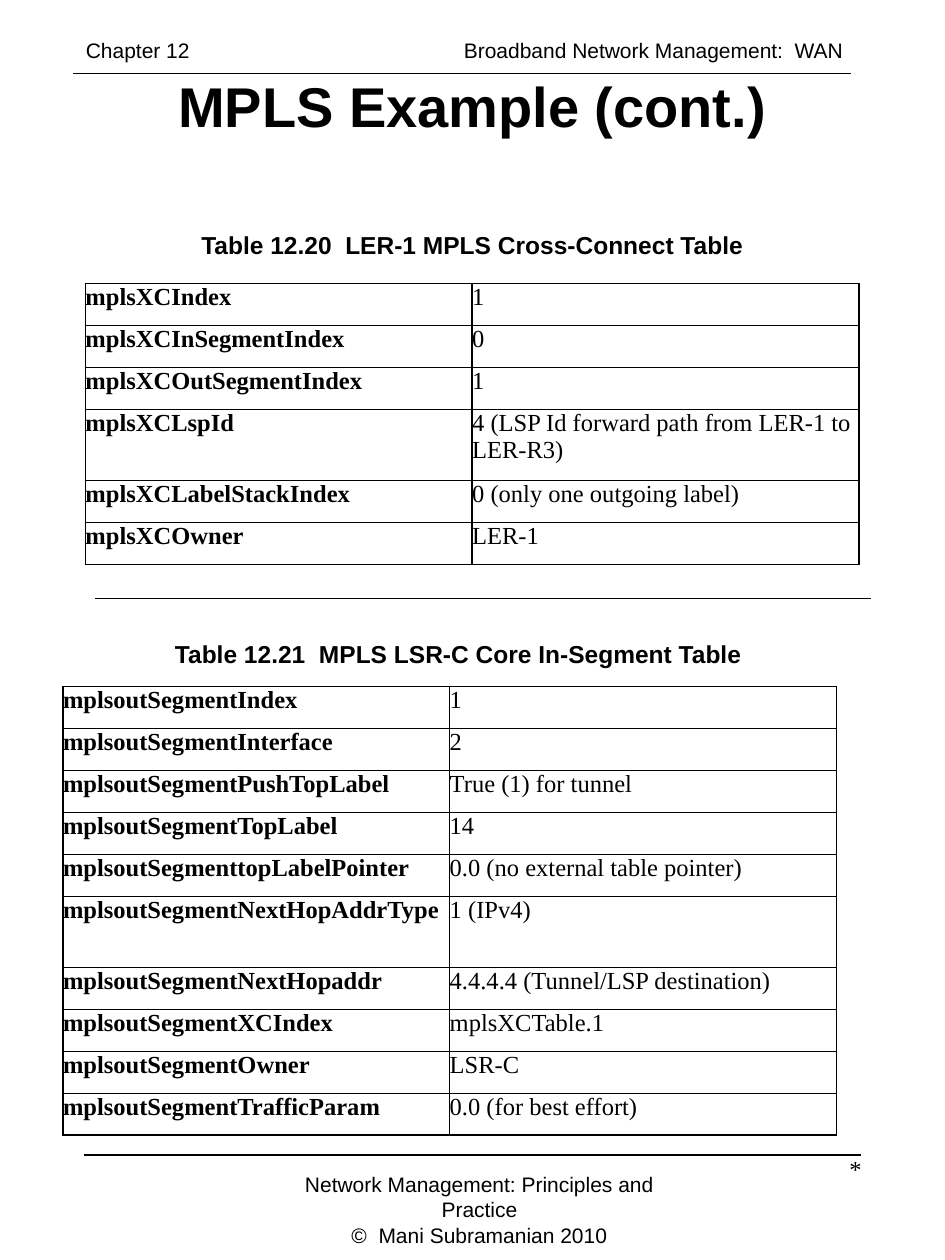
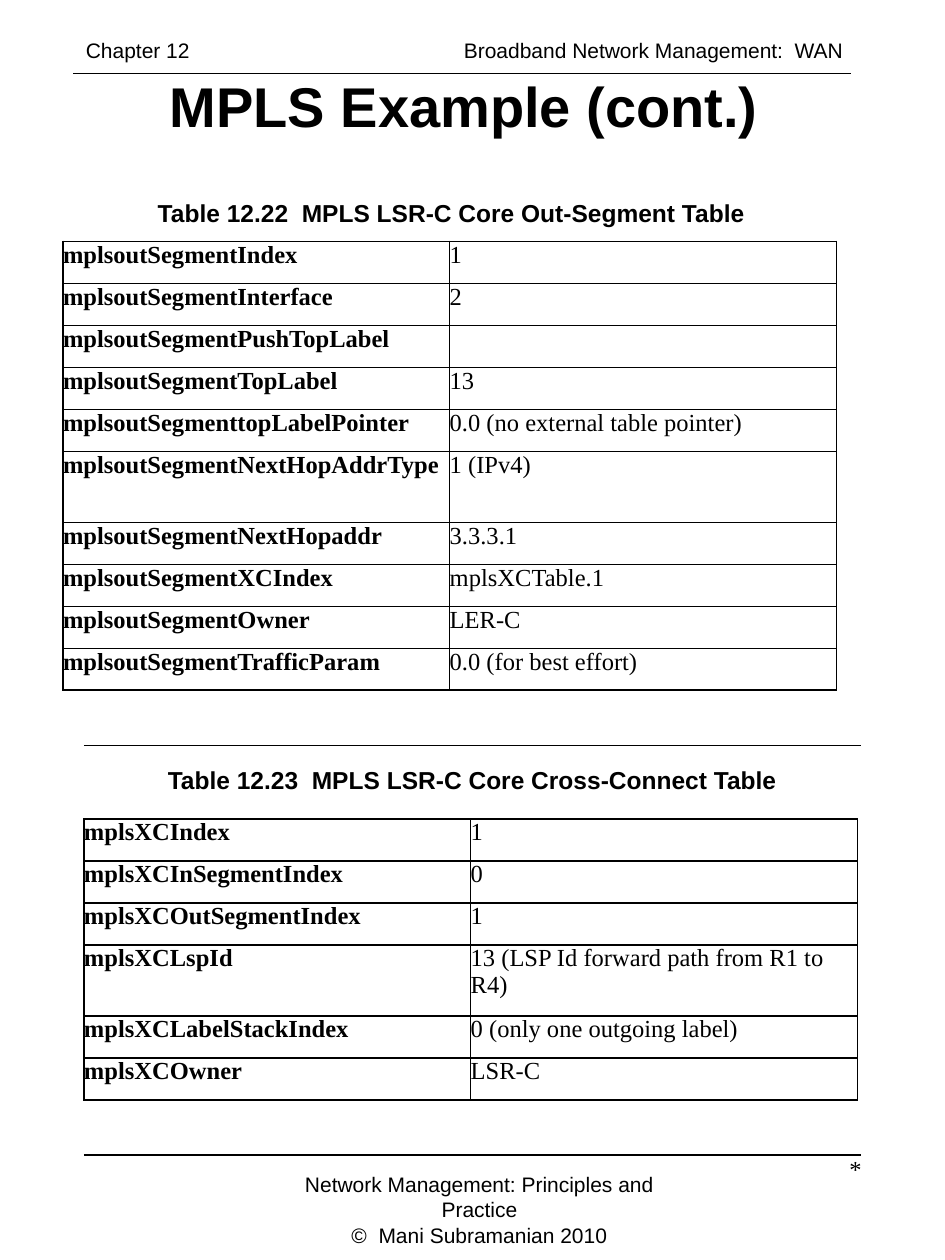
import dataclasses
import typing

import lxml.etree
import pptx
import pptx.dml.color
import pptx.enum.shapes
import pptx.enum.text
import pptx.oxml.ns
import pptx.slide
import pptx.table
import pptx.text.text
import pptx.util

Pt = pptx.util.Pt
ALIGN = pptx.enum.text.PP_ALIGN
ANCHOR = pptx.enum.text.MSO_ANCHOR
qn = pptx.oxml.ns.qn

COLORS = {"ink": "000000", "page": "FFFFFF"}
FONTS = {
    "title": {"name": "Arial", "size": Pt(32), "bold": True},
    "caption": {"name": "Arial", "size": Pt(14), "bold": True},
    "small": {"name": "Arial", "size": Pt(12), "bold": False},
    "label": {"name": "Times New Roman", "size": Pt(14), "bold": True},
    "value": {"name": "Times New Roman", "size": Pt(14), "bold": False},
}
RULE_WIDTH = 444
COLUMN = 221
ROW = 24
TALL_ROW = 40.6
HEAD_TAB = 216
EDGES = ("a:lnL", "a:lnR", "a:lnT", "a:lnB")

CROSS = tuple("mplsXC" + end for end in (
    "Index", "InSegmentIndex", "OutSegmentIndex",
    "LspId", "LabelStackIndex", "Owner"))
SEGMENT = tuple("mplsoutSegment" + end for end in (
    "Index", "Interface", "PushTopLabel", "TopLabel", "topLabelPointer",
    "NextHopAddrType", "NextHopaddr", "XCIndex", "Owner", "TrafficParam"))
TALL = {"mplsXCLspId", "mplsoutSegmentNextHopAddrType"}


@dataclasses.dataclass(frozen=True)
class Box:
    left: float
    top: float
    width: float
    height: float
    lines: tuple[str, ...]
    font: str
    align: typing.Any = ALIGN.CENTER
    anchor: typing.Any = ANCHOR.MIDDLE


@dataclasses.dataclass(frozen=True)
class Rule:
    left: float
    top: float


@dataclasses.dataclass(frozen=True)
class Grid:
    left: float
    top: float
    labels: tuple[str, ...]
    values: tuple[str, ...]


@dataclasses.dataclass(frozen=True)
class Page:
    boxes: tuple[Box, ...]
    split: Rule
    grids: tuple[Grid, ...]


HEAD = Box(42, 18, 451, 22, ("Chapter 12\tBroadband Network Management:  WAN",),
           "small", ALIGN.LEFT, ANCHOR.TOP)
FRAME = (
    Box(144, 666, 260, 36, ("Network Management: Principles and Practice",
                            "©  Mani Subramanian 2010"),
        "small", anchor=ANCHOR.TOP),
    Box(387.4, 656, 112, 48, ("*",), "value", ALIGN.RIGHT, ANCHOR.TOP),
)
RULES = (Rule(42, 42), Rule(48, 660))


def title(left: float, width: float) -> Box:
    return Box(left, 42, width, 36, ("MPLS Example (cont.)",), "title")


def caption(left: float, top: float, width: float, text: str) -> Box:
    return Box(left, top, width, 24.4, (text,), "caption")


PAGES = (
    Page(
        (title(0, 540),
         caption(48, 127.6, 444, "Table 12.20  LER-1 MPLS Cross-Connect Table"),
         caption(36, 361.5, 452, "Table 12.21  MPLS LSR-C Core In-Segment Table")),
        Rule(54, 342),
        (Grid(48.8, 162, CROSS,
              ("1", "0", "1", "4 (LSP Id forward path from LER-1 to LER-R3)",
               "0 (only one outgoing label)", "LER-1")),
         Grid(36, 392.3, SEGMENT,
              ("1", "2", "True (1) for tunnel", "14",
               "0.0 (no external table pointer)", "1 (IPv4)",
               "4.4.4.4 (Tunnel/LSP destination)", "mplsXCTable.1", "LSR-C",
               "0.0 (for best effort)"))),
    ),
    Page(
        (title(36, 458.5),
         caption(36, 109.5, 444, "Table 12.22  MPLS LSR-C Core Out-Segment Table"),
         caption(48, 433.5, 444, "Table 12.23  MPLS LSR-C Core Cross-Connect Table")),
        Rule(48, 426),
        (Grid(36, 138, SEGMENT,
              ("1", "2", "", "13", "0.0 (no external table pointer)",
               "1 (IPv4)", "3.3.3.1", "mplsXCTable.1", "LER-C",
               "0.0 (for best effort)")),
         Grid(48, 468, CROSS,
              ("1", "0", "1", "13 (LSP Id forward path from R1 to R4)",
               "0 (only one outgoing label)", "LSR-C"))),
    ),
)


def paint(target: typing.Any, format: dict[str, typing.Any]) -> None:
    for name, value in format.items():
        setattr(target, name, value)


def ink() -> pptx.dml.color.RGBColor:
    return pptx.dml.color.RGBColor.from_string(COLORS["ink"])


def write(para: pptx.text.text._Paragraph, text: str, font: str) -> None:
    if text:
        run = para.add_run()
        run.text = text
        paint(run.font, FONTS[font])
        run.font.color.rgb = ink()


def draw_box(slide: pptx.slide.Slide, box: Box) -> pptx.text.text.TextFrame:
    shape = slide.shapes.add_textbox(
        Pt(box.left), Pt(box.top), Pt(box.width), Pt(box.height))
    frame = shape.text_frame
    paint(frame, {"word_wrap": True, "vertical_anchor": box.anchor})
    for index, line in enumerate(box.lines):
        para = frame.add_paragraph() if index else frame.paragraphs[0]
        para.alignment = box.align
        write(para, line, box.font)
    return frame


def draw_head(slide: pptx.slide.Slide) -> None:
    para = draw_box(slide, HEAD).paragraphs[0]
    tabs = lxml.etree.SubElement(para._p.get_or_add_pPr(), qn("a:tabLst"))
    lxml.etree.SubElement(tabs, qn("a:tab"), pos=str(Pt(HEAD_TAB)), algn="l")


def draw_rule(slide: pptx.slide.Slide, rule: Rule) -> None:
    line = slide.shapes.add_connector(
        pptx.enum.shapes.MSO_CONNECTOR.STRAIGHT,
        Pt(rule.left), Pt(rule.top), Pt(rule.left + RULE_WIDTH), Pt(rule.top))
    line.line.width = Pt(1)
    line.line.color.rgb = ink()
    lxml.etree.SubElement(line._element.spPr, qn("a:effectLst"))


def draw_cell(cell: pptx.table._Cell, text: str, font: str) -> None:
    paint(cell, dict.fromkeys(
        ("margin_left", "margin_right", "margin_top", "margin_bottom"), Pt(0)))
    props = cell._tc.get_or_add_tcPr()
    for edge in EDGES:
        line = lxml.etree.SubElement(props, qn(edge), w=str(Pt(1)))
        fill = lxml.etree.SubElement(line, qn("a:solidFill"))
        lxml.etree.SubElement(fill, qn("a:srgbClr"), val=COLORS["ink"])
    cell.fill.background()
    write(cell.text_frame.paragraphs[0], text, font)


def draw_grid(slide: pptx.slide.Slide, grid: Grid) -> None:
    heights = [TALL_ROW if label in TALL else ROW for label in grid.labels]
    table = slide.shapes.add_table(
        len(heights), 2, Pt(grid.left), Pt(grid.top),
        Pt(2 * COLUMN), Pt(sum(heights))).table
    paint(table, {"first_row": False, "horz_banding": False})
    for column in table.columns:
        column.width = Pt(COLUMN)
    for index, pair in enumerate(zip(grid.labels, grid.values)):
        table.rows[index].height = Pt(heights[index])
        for side, font in enumerate(("label", "value")):
            draw_cell(table.cell(index, side), pair[side], font)


def draw_page(slide: pptx.slide.Slide, page: Page) -> None:
    back = slide.background.fill
    back.solid()
    back.fore_color.rgb = pptx.dml.color.RGBColor.from_string(COLORS["page"])
    draw_head(slide)
    for rule in (*RULES, page.split):
        draw_rule(slide, rule)
    for box in (*page.boxes, *FRAME):
        draw_box(slide, box)
    for grid in page.grids:
        draw_grid(slide, grid)


def main() -> None:
    deck = pptx.Presentation()
    paint(deck, {"slide_width": Pt(540), "slide_height": Pt(720)})
    for page in PAGES:
        draw_page(deck.slides.add_slide(deck.slide_layouts[6]), page)
    deck.save("out.pptx")


if __name__ == "__main__":
    main()
